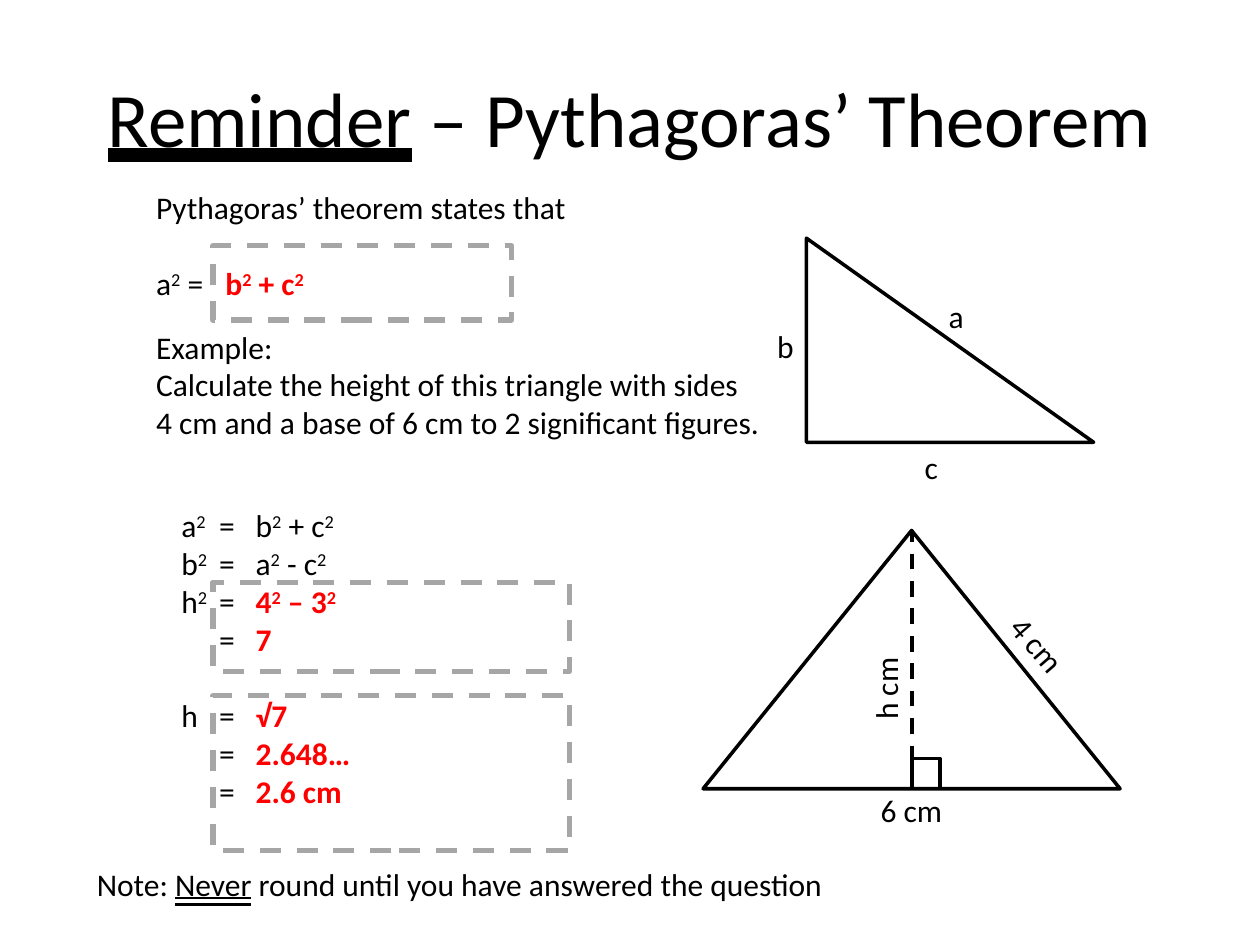
from pptx import Presentation
from pptx.dml.color import RGBColor
from pptx.enum.dml import MSO_LINE_DASH_STYLE as Dash
from pptx.enum.shapes import MSO_CONNECTOR as Connector, MSO_SHAPE as Shape
from pptx.enum.text import MSO_ANCHOR as Anchor, MSO_AUTO_SIZE as AutoSize
from pptx.enum.text import MSO_UNDERLINE as Underline, PP_ALIGN as Align
from pptx.oxml.ns import qn
from pptx.util import Inches, Pt
from lxml.etree import SubElement

BLACK = RGBColor(0, 0, 0)
RED = RGBColor(255, 0, 0)
GREY = RGBColor(166, 166, 166)
FONT = "Calibri"
LINE_GAP = Pt(22)

# Markup: *answer* is bold red, _word_ is underlined, ^2 is a raised 2, ~ opens a gap above.
TITLE = "_Reminder_ – Pythagoras’ Theorem"
THEOREM = ["Pythagoras’ theorem states that", "~a^2 =\t*b^2 + c^2*"]
EXAMPLE = [
    "Example:",
    "Calculate the height of this triangle with sides 4 cm and a base of 6 cm to 2 significant figures.",
]
SOLUTION = [
    "a^2\t=\tb^2 + c^2",
    "b^2\t=\ta^2 - c^2",
    "h^2\t=\t*4^2 – 3^2*",
    "\t=\t*7*",
    "~h\t=\t*√7*",
    "\t=\t*2.648…*",
    "\t=\t*2.6 cm*",
]
NOTE = "Note: _Never_ round until you have answered the question"

BLOCKS = [
    (THEOREM, (1.14, 1.44, 4.02, 1.01), (0.55,)),
    (EXAMPLE, (1.14, 2.55, 5, 1.31), ()),
    (SOLUTION, (1.34, 3.97, 1.81, 2.52), (0.3, 0.59)),
]
LABELS = [
    ("h cm", (6.68, 5.26, 0.7, 0.4), 270),
    ("4 cm", (7.89, 4.92, 0.7, 0.4), 49.1),
    ("6 cm", (6.89, 6.23, 0.7, 0.4), 0),
    ("a", (7.43, 2.31, 0.32, 0.4), 0),
    ("b", (6.07, 2.55, 0.34, 0.4), 0),
    ("c", (7.24, 3.51, 0.31, 0.4), 0),
    (NOTE, (0.67, 6.82, 6.04, 0.4), 0),
]
FIGURES = [
    (Shape.ISOSCELES_TRIANGLE, (5.58, 4.21, 3.31, 2.05)),
    (Shape.RECTANGLE, (7.24, 6.02, 0.22, 0.24)),
    (Shape.RIGHT_TRIANGLE, (6.4, 1.89, 2.28, 1.62)),
]
ANSWER_FRAMES = [(1.69, 4.62, 2.83, 0.71), (1.69, 5.52, 2.83, 1.23), (1.69, 1.95, 2.37, 0.59)]
HEIGHT_LINE = (7.24, 6.26, 7.24, 4.21)


def inches(values):
    return [Inches(value) for value in values]


def write(para, text, size, underline):
    para.font.name, para.font.size = FONT, Pt(size)
    para.font.color.rgb = BLACK
    if text.startswith("~"):
        para.space_before = LINE_GAP
        text = text[1:]
    for answer_index, part in enumerate(text.split("*")):
        for mark_index, piece in enumerate(part.split("_")):
            for chunk_index, chunk in enumerate(piece.replace("^2", "^2^").split("^")):
                if not chunk:
                    continue
                span = para.add_run()
                span.text = chunk
                if answer_index % 2:
                    span.font.bold = True
                    span.font.color.rgb = RED
                if mark_index % 2:
                    span.font.underline = underline
                if chunk_index % 2:
                    span.font._element.set("baseline", "30000")


def set_tabs(para, stops):
    tabs = SubElement(para._p.get_or_add_pPr(), qn("a:tabLst"))
    for stop in stops:
        SubElement(tabs, qn("a:tab"), pos=str(Inches(stop)), algn="l")


def add_text(page, lines, place, wrap, stops=(), rotation=0):
    box = page.shapes.add_textbox(*inches(place))
    box.rotation = rotation
    frame = box.text_frame
    frame.word_wrap = wrap
    frame.auto_size = AutoSize.SHAPE_TO_FIT_TEXT
    for index, line in enumerate(lines):
        para = frame.add_paragraph() if index else frame.paragraphs[0]
        if stops and "\t" in line:
            set_tabs(para, stops)
        write(para, line, 18, Underline.DOUBLE_LINE)


def add_outline(page, kind, place, colour, width, dash=None):
    shape = page.shapes.add_shape(kind, *inches(place))
    shape.shadow.inherit = False
    shape.fill.background()
    shape.line.color.rgb = colour
    shape.line.width = Pt(width)
    if dash:
        shape.line.dash_style = dash


def main():
    deck = Presentation()
    deck.slide_width, deck.slide_height = Inches(10), Inches(7.5)
    page = deck.slides.add_slide(deck.slide_layouts[5])

    title = page.shapes.title
    title.left, title.top, title.width, title.height = inches((0.5, 0.3, 9, 1.25))
    title.text_frame.vertical_anchor = Anchor.MIDDLE
    heading = title.text_frame.paragraphs[0]
    heading.alignment = Align.CENTER
    write(heading, TITLE, 44, Underline.HEAVY_LINE)

    for kind, place in FIGURES:
        add_outline(page, kind, place, BLACK, 2)
    height = page.shapes.add_connector(Connector.STRAIGHT, *inches(HEIGHT_LINE))
    height.line.color.rgb = BLACK
    height.line.width = Pt(2.25)
    height.line.dash_style = Dash.DASH
    SubElement(height._element.spPr, qn("a:effectLst"))

    for lines, place, stops in BLOCKS:
        add_text(page, lines, place, True, stops)
    for text, place, rotation in LABELS:
        add_text(page, [text], place, False, rotation=rotation)
    for place in ANSWER_FRAMES:
        add_outline(page, Shape.RECTANGLE, place, GREY, 3, Dash.DASH)

    deck.save("out.pptx")


if __name__ == "__main__":
    main()
